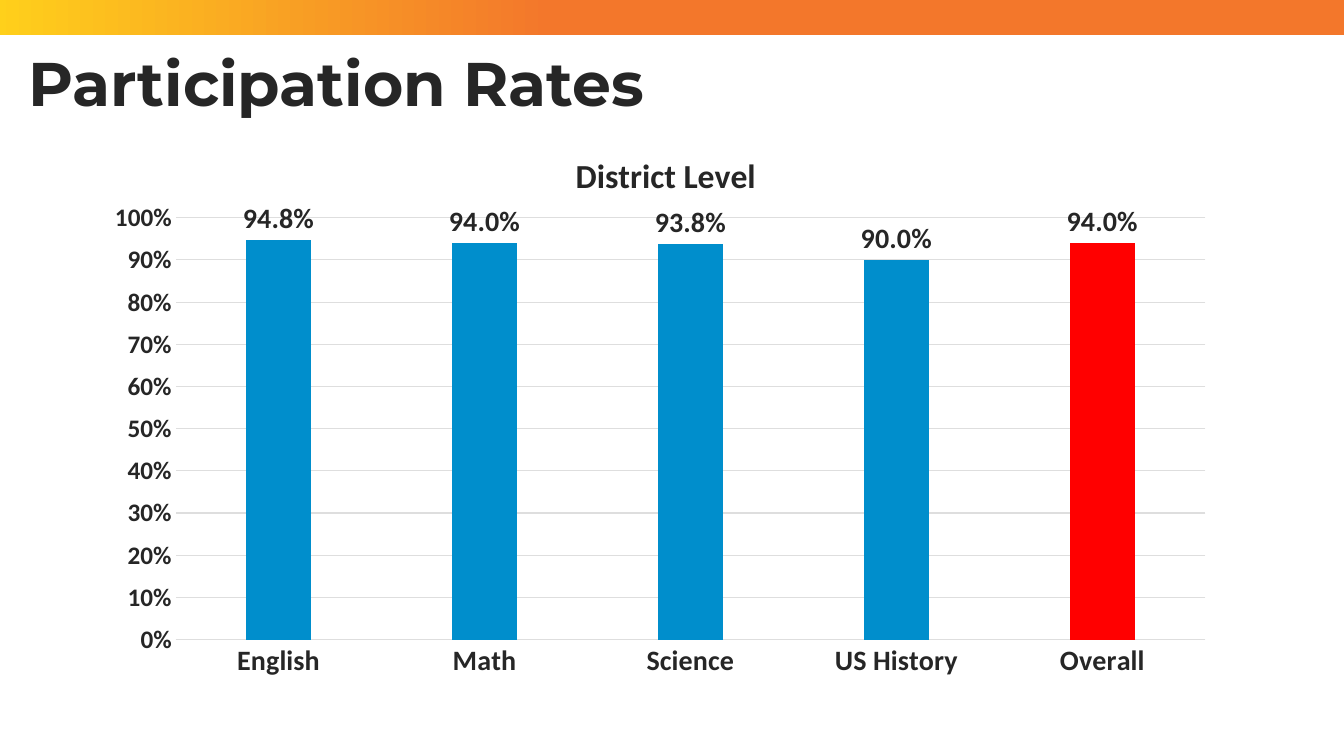
import copy
from dataclasses import dataclass

import pptx
import pptx.chart.data
import pptx.dml.color
import pptx.enum.chart
import pptx.enum.shapes
import pptx.enum.text
import pptx.oxml
import pptx.oxml.ns
import pptx.util

Inches = pptx.util.Inches
Pt = pptx.util.Pt


@dataclass(frozen=True)
class Theme:
    text: str = "262626"
    grid: str = "DEDEDE"
    bar: str = "008ECC"
    overall: str = "FF0000"
    band_start: str = "FFD01B"
    band_end: str = "F3772B"
    heading_font: str = "Montserrat"
    chart_font: str = "Calibri"
    heading_size: int = 44
    chart_title_size: int = 24
    label_size: int = 20
    scale_size: int = 18


THEME = Theme()
RATES = {
    "English": 0.948,
    "Math": 0.94,
    "Science": 0.938,
    "US History": 0.9,
    "Overall": 0.94,
}


def rgb(value):
    return pptx.dml.color.RGBColor.from_string(value)


def style_font(font, name, size):
    font.name = name
    font.size = Pt(size)
    font.bold = True
    font.color.rgb = rgb(THEME.text)


def style_line(line):
    line.color.rgb = rgb(THEME.grid)
    line.width = Pt(0.75)


def make_layout(**values):
    items = "".join(f'<c:{tag} val="{val}"/>' for tag, val in values.items())
    return pptx.oxml.parse_xml(
        f'<c:layout {pptx.oxml.ns.nsdecls("c")}>'
        f"<c:manualLayout>{items}</c:manualLayout></c:layout>"
    )


def set_layout(parent, layout, following):
    for old in parent.findall(pptx.oxml.ns.qn("c:layout")):
        parent.remove(old)
    parent.insert_element_before(layout, *following)


def add_band(slide, left, top, width, height):
    sp = slide.shapes.add_shape(
        pptx.enum.shapes.MSO_SHAPE.RECTANGLE, left, top, width, height
    )
    sp.shadow.inherit = False
    sp.line.fill.background()
    sp.fill.gradient()
    sp.fill.gradient_angle = 0
    start, end = sp.fill.gradient_stops
    start.position, end.position = 0, 0.41
    start.color.rgb = rgb(THEME.band_start)
    end.color.rgb = rgb(THEME.band_end)
    end_stop = sp._element.xpath(".//a:gs")[-1]
    last_stop = copy.deepcopy(end_stop)
    last_stop.set("pos", "100000")
    end_stop.addnext(last_stop)


def add_title(slide, left, top, width, height):
    title = slide.shapes.title
    title.left, title.top, title.width, title.height = left, top, width, height
    tf = title.text_frame
    tf.text = "Participation Rates"
    tf.word_wrap = True
    tf.vertical_anchor = pptx.enum.text.MSO_ANCHOR.MIDDLE
    p = tf.paragraphs[0]
    p.alignment = pptx.enum.text.PP_ALIGN.LEFT
    p.line_spacing = 0.9
    style_font(p.font, THEME.heading_font, THEME.heading_size)


def add_rates_chart(slide, left, top, width, height):
    data = pptx.chart.data.CategoryChartData(number_format="0.0%")
    data.categories = list(RATES)
    data.add_series("Series 1", list(RATES.values()))
    chart = slide.shapes.add_chart(
        pptx.enum.chart.XL_CHART_TYPE.COLUMN_CLUSTERED,
        left, top, width, height, data,
    ).chart
    style_font(chart.font, THEME.chart_font, THEME.label_size)
    chart.has_legend = False
    chart.has_title = True
    tf = chart.chart_title.text_frame
    tf.text = "District Level"
    style_font(tf.paragraphs[0].font, THEME.chart_font, THEME.chart_title_size)
    chart.chart_title.include_in_layout = False
    title = chart.chart_title._element
    set_layout(
        title,
        make_layout(xMode="edge", yMode="edge", x=0.42, y=0.04),
        ("c:overlay", "c:spPr", "c:txPr"),
    )
    plot_area = chart._chartSpace.chart.plotArea
    for old in plot_area.findall(pptx.oxml.ns.qn("c:layout")):
        plot_area.remove(old)
    plot_area.insert(0, make_layout(
        layoutTarget="inner", xMode="edge", yMode="edge",
        x=0.073, y=0.166, w=0.907, h=0.746,
    ))
    style_axes(chart)
    style_bars(chart.plots[0])


def style_axes(chart):
    no_tick = pptx.enum.chart.XL_TICK_MARK.NONE
    sizes = (
        (chart.category_axis, THEME.label_size),
        (chart.value_axis, THEME.scale_size),
    )
    for axis, size in sizes:
        axis.major_tick_mark = axis.minor_tick_mark = no_tick
        style_font(axis.tick_labels.font, THEME.chart_font, size)
    style_line(chart.category_axis.format.line)
    scale = chart.value_axis
    scale.minimum_scale, scale.maximum_scale, scale.major_unit = 0, 1, 0.1
    scale.tick_labels.number_format = "0%"
    scale.tick_labels.number_format_is_linked = False
    scale.format.line.fill.background()
    style_line(scale.major_gridlines.format.line)


def style_bars(plot):
    plot.gap_width = 219
    plot.overlap = -27
    plot.vary_by_categories = False
    series = plot.series[0]
    overall = series.points[len(RATES) - 1]
    for part, color in ((series, THEME.bar), (overall, THEME.overall)):
        part.format.fill.solid()
        part.format.fill.fore_color.rgb = rgb(color)
    labels = series.data_labels
    labels.show_value = True
    labels.number_format = "0.0%"
    labels.number_format_is_linked = False
    labels.position = pptx.enum.chart.XL_LABEL_POSITION.OUTSIDE_END
    style_font(labels.font, THEME.chart_font, THEME.label_size)


def main():
    prs = pptx.Presentation()
    prs.slide_width, prs.slide_height = Inches(13.33), Inches(7.5)
    slide = prs.slides.add_slide(prs.slide_layouts.get_by_name("Title Only"))
    add_band(slide, Inches(-0.06), Inches(-0.05), Inches(13.45), Inches(0.4))
    add_title(slide, Inches(0.18), Inches(0.44), Inches(10.91), Inches(0.83))
    add_rates_chart(slide, Inches(0.92), Inches(1.23), Inches(11.26), Inches(5.61))
    prs.save("out.pptx")


if __name__ == "__main__":
    main()
